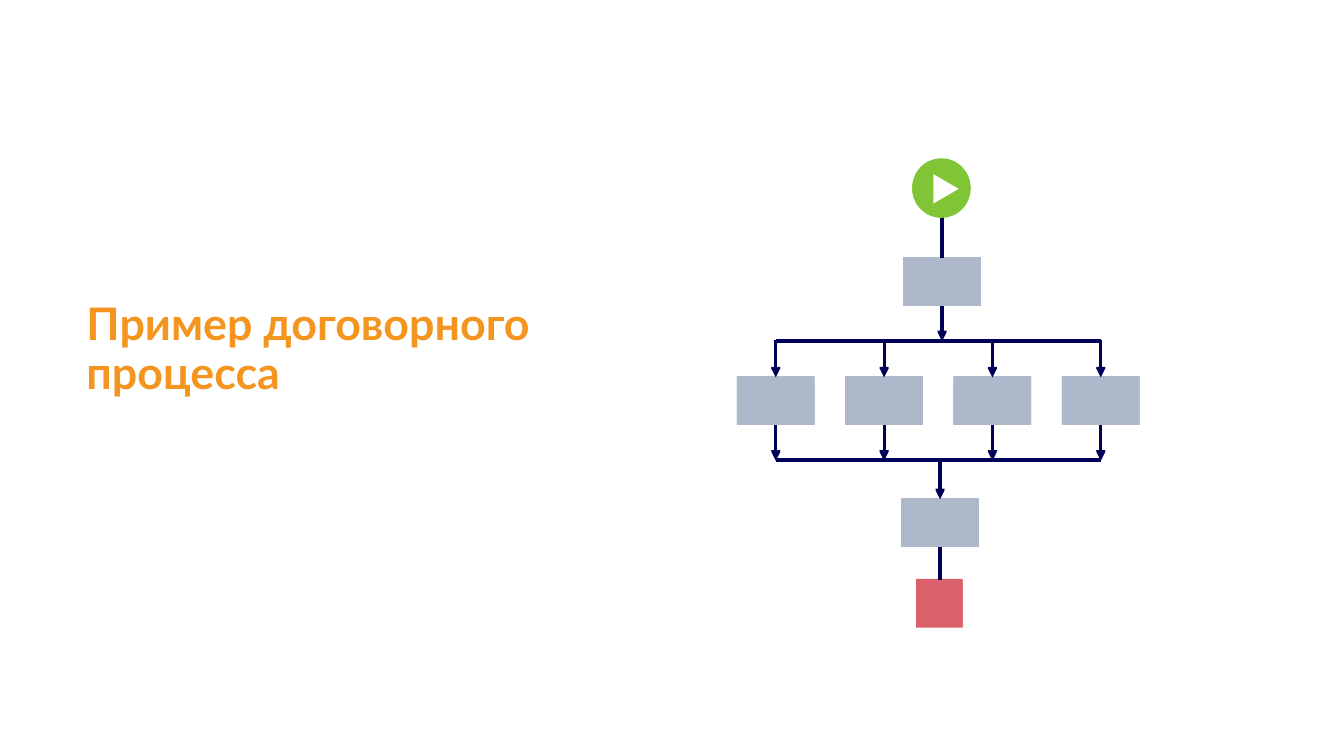
from lxml import etree
from pptx import Presentation
from pptx import util as u
from pptx.dml.color import RGBColor
from pptx.enum import shapes, text
from pptx.oxml import ns

ORANGE = RGBColor(0xF3, 0x95, 0x1F)
NAVY = RGBColor(0x00, 0x00, 0x58)
STEEL = RGBColor(0xAD, 0xB9, 0xCA)
GREEN = RGBColor(0x80, 0xC5, 0x35)
RED = RGBColor(0xDA, 0x60, 0x6C)
WHITE = RGBColor(0xFF, 0xFF, 0xFF)

STEP_W, STEP_H = 1.96, 1.2
BRANCHES, BRANCH_PITCH = 4, 2.73


def add_title(slide, left, top, width, height, lines):
    title = slide.shapes.add_textbox(u.Cm(left), u.Cm(top), u.Cm(width), u.Cm(height))
    frame = title.text_frame
    frame.word_wrap = True
    frame.vertical_anchor = text.MSO_ANCHOR.MIDDLE
    heading = frame.paragraphs[0]
    heading.line_spacing = 0.9
    for number, line in enumerate(lines):
        if number:
            heading.add_line_break()
        run = heading.add_run()
        run.text = line
        for name, value in {"name": "Lato", "size": u.Pt(32), "bold": True}.items():
            setattr(run.font, name, value)
        run.font.color.rgb = ORANGE


def add_process(slide, left, top):
    parts = slide.shapes.add_group_shape().shapes

    def block(kind, x, y, width, height, color):
        node = parts.add_shape(kind, u.Cm(left + x), u.Cm(top + y), u.Cm(width), u.Cm(height))
        node.shadow.inherit = False
        node.fill.solid()
        node.fill.fore_color.rgb = color
        node.line.fill.background()
        return node

    def step(x, y):
        block(shapes.MSO_SHAPE.RECTANGLE, x, y, STEP_W, STEP_H, STEEL)

    def flow(x1, y1, x2, y2, arrow=True):
        link = parts.add_connector(shapes.MSO_CONNECTOR.STRAIGHT, u.Cm(left + x1),
                                   u.Cm(top + y1), u.Cm(left + x2), u.Cm(top + y2))
        link.line.color.rgb = NAVY
        link.line.width = u.Pt(2.25)
        if arrow:
            line = link.line._get_or_add_ln()
            etree.SubElement(line, ns.qn("a:tailEnd"), type="triangle")
        etree.SubElement(link._element.spPr, ns.qn("a:effectLst"))

    first_x, first_y = 4.19, 2.49
    branch_y = 5.49
    last_x, last_y = 4.14, 8.56
    split_y, merge_y = 4.58, 7.59
    first_axis, last_axis = first_x + STEP_W / 2, last_x + STEP_W / 2
    branch_xs = [number * BRANCH_PITCH for number in range(BRANCHES)]
    branch_axes = [x + STEP_W / 2 for x in branch_xs]

    # Steps
    step(first_x, first_y)
    for x in branch_xs:
        step(x, branch_y)
    step(last_x, last_y)

    # Split and merge bars with the arrows of each branch
    for bar_y in (split_y, merge_y):
        flow(branch_axes[0], bar_y, branch_axes[-1], bar_y, arrow=False)
    for axis in branch_axes:
        flow(axis, split_y, axis, branch_y)
        flow(axis, branch_y + STEP_H, axis, merge_y)

    # Main line of the process
    flow(first_axis, first_y + STEP_H, first_axis, split_y)
    flow(last_axis, merge_y, last_axis, last_y)
    flow(first_axis, 1.42, first_axis, first_y, arrow=False)
    flow(last_axis, last_y + STEP_H, last_axis, 10.82, arrow=False)

    # Start and end marks
    block(shapes.MSO_SHAPE.OVAL, 4.42, 0, 1.47, 1.47, GREEN)
    play = block(shapes.MSO_SHAPE.ISOSCELES_TRIANGLE, 4.9, 0.42, 0.74, 0.64, WHITE)
    play.rotation = 90
    block(shapes.MSO_SHAPE.RECTANGLE, 4.52, 10.6, 1.17, STEP_H, RED)


def main():
    deck = Presentation()
    deck.slide_width, deck.slide_height = u.Cm(33.87), u.Cm(19.05)
    slide = deck.slides.add_slide(deck.slide_layouts[6])

    # Two layers, slightly shifted, thicken the horizontal bars
    process_left, process_top, layer_shift = 18.57, 3.99, 0.03
    add_process(slide, process_left, process_top)
    add_title(slide, 1.93, 6.58, 12.95, 4.5, ["Пример договорного", "процесса"])
    add_process(slide, process_left, process_top + layer_shift)

    deck.save("out.pptx")


if __name__ == "__main__":
    main()
